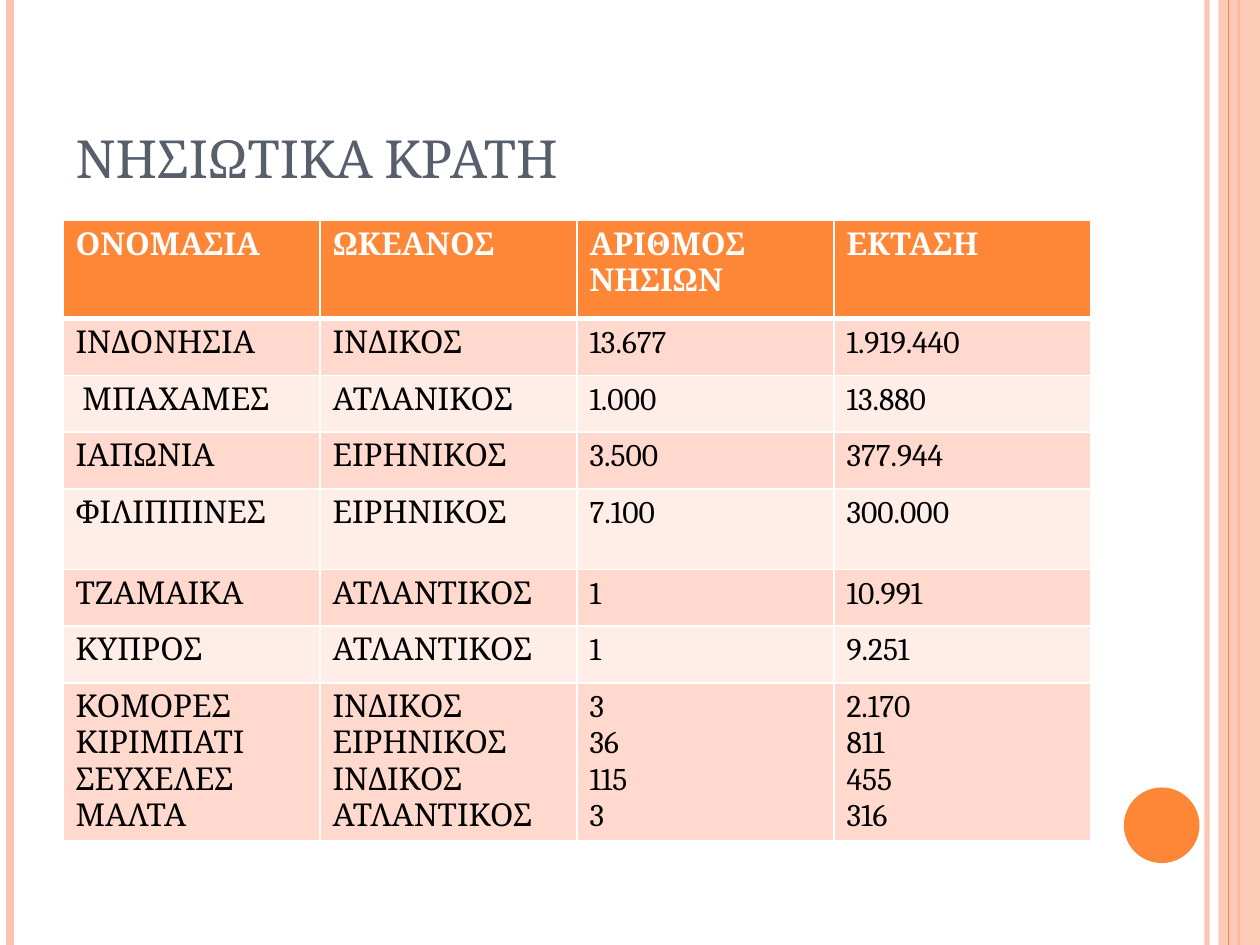
"""Build a slide with a table of island states and a striped peach frame."""
import pptx
import pptx.util
import pptx.dml.color
import pptx.enum.shapes
import pptx.enum.text
import pptx.oxml
import pptx.oxml.ns

Inches = pptx.util.Inches
Pt = pptx.util.Pt
RGBColor = pptx.dml.color.RGBColor
Shape = pptx.enum.shapes.MSO_SHAPE

ORANGE = RGBColor(0xFE, 0x86, 0x37)
PEACH = RGBColor(0xFE, 0xC3, 0xAE)
DARK = RGBColor(0xFF, 0xD9, 0xCE)
LIGHT = RGBColor(0xFF, 0xED, 0xE8)
SLATE = RGBColor(0x57, 0x5F, 0x6D)
WHITE = RGBColor(0xFF, 0xFF, 0xFF)
BLACK = RGBColor(0, 0, 0)
FACE = "Cambria"
SPACE = pptx.oxml.ns.nsdecls("a")


def fade(shape, part):
    tint = shape.element.xpath("./p:spPr//a:srgbClr")[0]
    tint.append(pptx.oxml.parse_xml(f'<a:alpha {SPACE} val="{part * 1000}"/>'))


def edge(cell, sides):
    for spot, (side, width) in enumerate(sides.items()):
        line = pptx.oxml.parse_xml(
            f'<a:{side} {SPACE} w="{Pt(width)}"><a:solidFill>'
            f'<a:srgbClr val="{WHITE}"/></a:solidFill></a:{side}>')
        cell._tc.get_or_add_tcPr().insert(spot, line)


deck = pptx.Presentation()
deck.slide_width = Inches(10)
deck.slide_height = Inches(7.5)
slide = deck.slides.add_slide(deck.slide_layouts[5])
shapes = slide.shapes

lines = []
for left, color, width in [(9.58, PEACH, 3), (0.08, PEACH, 4.5),
                           (9.83, ORANGE, 1.5), (9.75, ORANGE, 0.75)]:
    line = shapes.add_connector(
        pptx.enum.shapes.MSO_CONNECTOR.STRAIGHT,
        Inches(left), Inches(0), Inches(left), Inches(7.5))
    line.line.color.rgb = color
    line.line.width = Pt(width)
    line.element.spPr.append(pptx.oxml.parse_xml(f"<a:effectLst {SPACE}/>"))
    lines.append(line)
fade(lines[0], 93)

band = shapes.add_shape(Shape.RECTANGLE, Inches(9.67), Inches(0),
                        Inches(0.33), Inches(7.5))
disc = shapes.add_shape(Shape.OVAL, Inches(8.92), Inches(6.25),
                        Inches(0.6), Inches(0.6))
for shape, color in [(band, PEACH), (disc, ORANGE)]:
    shape.shadow.inherit = False
    shape.fill.solid()
    shape.fill.fore_color.rgb = color
    shape.line.fill.background()
fade(band, 87)
lines[-1].element.getparent().remove(lines[-1].element)
band.element.addnext(lines[-1].element)

title = shapes.title
title.left, title.top = Inches(0.5), Inches(0.3)
title.width, title.height = Inches(8.17), Inches(1.25)
frame = title.text_frame
frame.text = "ΝΗΣΙΩΤΙΚΑ ΚΡΑΤΗ"
frame.word_wrap = True
frame.vertical_anchor = pptx.enum.text.MSO_ANCHOR.BOTTOM
head = frame.paragraphs[0]
head.alignment = pptx.enum.text.PP_ALIGN.LEFT
head.font.name = FACE
head.font.size = Pt(30)
head.font.color.rgb = SLATE

rows = [
    ("ΟΝΟΜΑΣΙΑ", "ΩΚΕΑΝΟΣ", "ΑΡΙΘΜΟΣ ΝΗΣΙΩΝ", "ΕΚΤΑΣΗ"),
    ("ΙΝΔΟΝΗΣΙΑ", "ΙΝΔΙΚΟΣ", "13.677", "1.919.440"),
    (" ΜΠΑΧΑΜΕΣ", "ΑΤΛΑΝΙΚΟΣ", "1.000", "13.880"),
    ("ΙΑΠΩΝΙΑ", "ΕΙΡΗΝΙΚΟΣ", "3.500", "377.944"),
    ("ΦΙΛΙΠΠΙΝΕΣ", "ΕΙΡΗΝΙΚΟΣ", "7.100", "300.000"),
    ("ΤΖΑΜΑΙΚΑ", "ΑΤΛΑΝΤΙΚΟΣ", "1", "10.991"),
    ("ΚΥΠΡΟΣ", "ΑΤΛΑΝΤΙΚΟΣ", "1", "9.251"),
    ("ΚΟΜΟΡΕΣ\nΚΙΡΙΜΠΑΤΙ\nΣΕΥΧΕΛΕΣ\nΜΑΛΤΑ",
     "ΙΝΔΙΚΟΣ\nΕΙΡΗΝΙΚΟΣ\nΙΝΔΙΚΟΣ\nΑΤΛΑΝΤΙΚΟΣ",
     "3\n36\n115\n3", "2.170\n811\n455\n316"),
]
heights = [0.78, 0.45, 0.45, 0.45, 0.64, 0.45, 0.45, 1.25]
table = shapes.add_table(len(rows), 4, Inches(0.5), Inches(1.75),
                         Inches(8.16), Inches(sum(heights))).table
for col in table.columns:
    col.width = Inches(2.04)
for r, (row, height) in enumerate(zip(rows, heights)):
    table.rows[r].height = Inches(height)
    for c, text in enumerate(row):
        cell = table.cell(r, c)
        cell.text = text
        cell.fill.solid()
        cell.fill.fore_color.rgb = ORANGE if r == 0 else (LIGHT, DARK)[r % 2]
        edge(cell, {"lnL": 1, "lnR": 1, "lnT": 3 if r == 1 else 1,
                    "lnB": 3 if r == 0 else 1})
        for para in cell.text_frame.paragraphs:
            para.font.name = FACE
            para.font.size = Pt(18)
            para.font.bold = r == 0
            para.font.color.rgb = WHITE if r == 0 else BLACK

deck.save("out.pptx")
